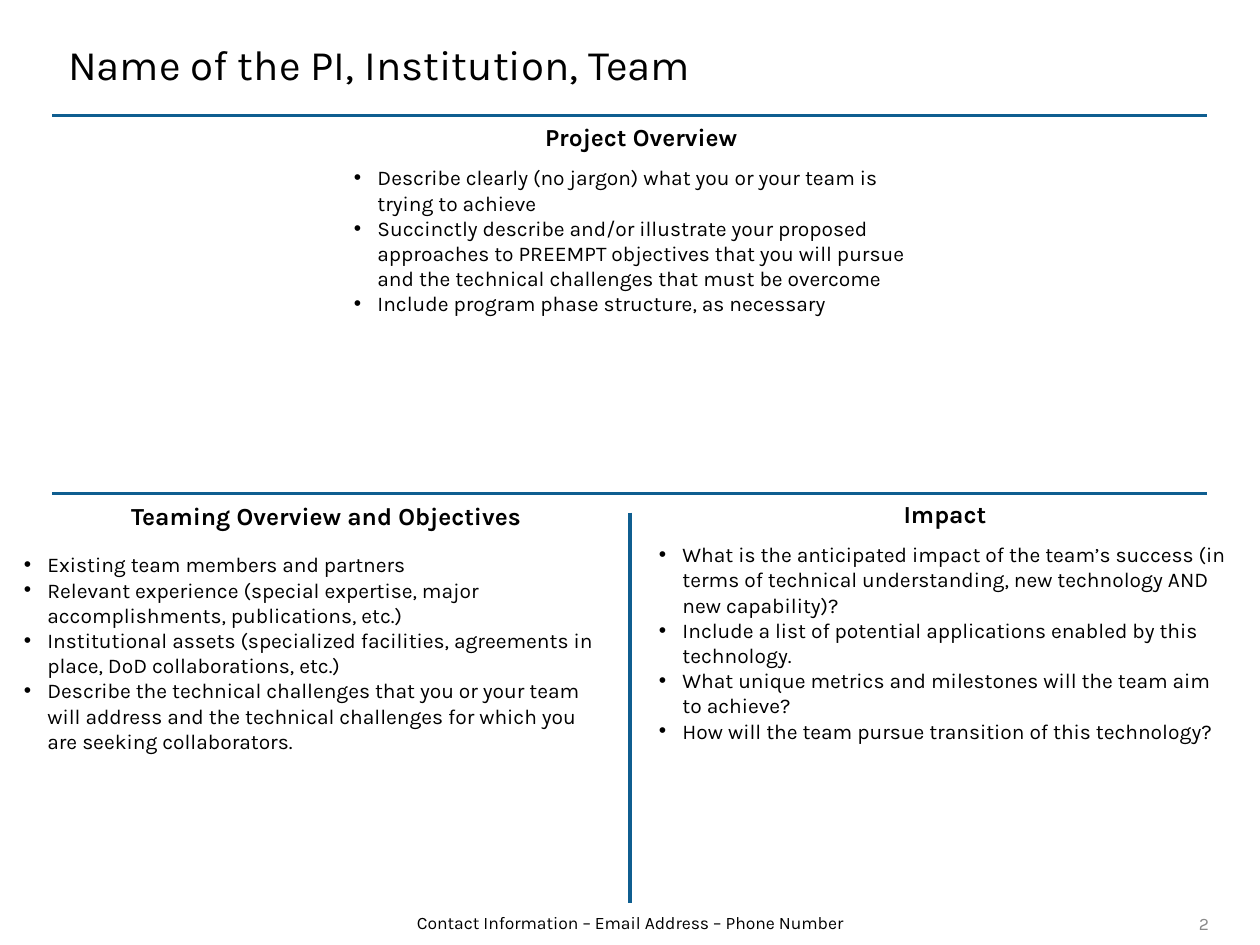
from lxml import etree
from pptx import Presentation
from pptx import util as u
from pptx.dml.color import RGBColor
from pptx.enum import shapes, text
from pptx.oxml.ns import qn

Pt = u.Pt
FONT = "Karla"
BLACK, BLUE, GRAY = "000000", "0F5E90", "898989"
HEADING = {"size": Pt(14), "bold": True}
BODY = {"size": Pt(12)}
SMALL = {"size": Pt(10)}
LEFT, CENTER, RIGHT = text.PP_ALIGN.LEFT, text.PP_ALIGN.CENTER, text.PP_ALIGN.RIGHT
TOP, MIDDLE = text.MSO_ANCHOR.TOP, text.MSO_ANCHOR.MIDDLE

OVERVIEW = [
    "Describe clearly (no jargon) what you or your team is trying to achieve",
    "Succinctly describe and/or illustrate your proposed approaches to PREEMPT "
    "objectives that you will pursue and the technical challenges that must be overcome",
    "Include program phase structure, as necessary",
]
TEAMING = [
    "Existing team members and partners",
    "Relevant experience (special expertise, major accomplishments, publications, etc.)",
    "Institutional assets (specialized facilities, agreements in place, "
    "DoD collaborations, etc.)",
    "Describe the technical challenges that you or your team will address and the "
    "technical challenges for which you are seeking collaborators.",
]
IMPACT = [
    "What is the anticipated impact of the team’s success (in terms of technical "
    "understanding, new technology AND new capability)?",
    "Include a list of potential applications enabled by this technology.",
    "What unique metrics and milestones will the team aim to achieve?",
    "How will the team pursue transition of this technology?",
]


def color(value):
    return RGBColor.from_string(value)


def set_font(font, fmt, fill=BLACK):
    for name, value in {"name": FONT, **fmt}.items():
        setattr(font, name, value)
    font.color.rgb = color(fill)


def add_bullet(p):
    pPr = p._p.get_or_add_pPr()
    pPr.set("marL", str(Pt(13.5)))
    pPr.set("indent", str(Pt(-13.5)))
    etree.SubElement(pPr, qn("a:buFont")).set("typeface", "Arial")
    etree.SubElement(pPr, qn("a:buChar")).set("char", "•")


def add_text(s, box, lines, fmt, fill=BLACK, align=LEFT, anchor=TOP, bullets=False):
    sp = s.shapes.add_textbox(*map(Pt, box))
    tf = sp.text_frame
    tf.word_wrap = True
    tf.vertical_anchor = anchor
    for i, line in enumerate(lines):
        p = tf.paragraphs[0] if i == 0 else tf.add_paragraph()
        p.alignment = align
        if bullets:
            add_bullet(p)
        r = p.add_run()
        r.text = line
        set_font(r.font, fmt, fill)


def add_rule(s, x1, y1, x2, y2):
    line = s.shapes.add_connector(
        shapes.MSO_CONNECTOR.STRAIGHT, Pt(x1), Pt(y1), Pt(x2), Pt(y2))
    line.line.color.rgb = color(BLUE)
    line.line.width = Pt(1.75)
    etree.SubElement(line._element.spPr, qn("a:effectLst"))


def add_title(s, box, title):
    sp = s.shapes.title
    sp.left, sp.top, sp.width, sp.height = map(Pt, box)
    tf = sp.text_frame
    tf.auto_size = text.MSO_AUTO_SIZE.NONE
    tf.word_wrap = True
    tf.vertical_anchor = MIDDLE
    p = tf.paragraphs[0]
    p.alignment = LEFT
    r = p.add_run()
    r.text = title
    set_font(r.font, {"size": Pt(24)})


def add_section(s, box, heading, heading_box, bullets):
    x, y, w, h = box
    dx, dy, hw = heading_box
    add_text(s, (x + dx, y + dy, hw, 24.5), [heading], HEADING, align=CENTER)
    add_text(s, box, bullets, BODY, bullets=True)


def add_footer(s, box, contact, number):
    x, y, w, h = box
    add_text(s, box, [contact], SMALL, align=CENTER, anchor=MIDDLE)
    add_text(s, (x + 532.8, y + 0.5, 60, 23), [number], SMALL, GRAY, RIGHT, MIDDLE)


def main():
    prs = Presentation()
    prs.slide_width, prs.slide_height = Pt(720), Pt(540)
    s = prs.slides.add_slide(prs.slide_layouts[5])
    add_title(s, (31.7, 12.2, 562.3, 48.2), "Name of the PI, Institution, Team")
    for y in (66.2, 282.2):
        add_rule(s, 30, y, 690, y)
    add_rule(s, 360, 293, 360, 516)
    add_section(s, (195.1, 90.7, 342, 94.3), "Project Overview",
                (-8.6, -24.5, 360), OVERVIEW)
    add_section(s, (6.5, 311.8, 342, 123.8), "Teaming Overview and Objectives",
                (34.5, -28.8, 290.9), TEAMING)
    add_section(s, (369.4, 306, 342, 123.8), "Impact", (-9.4, -24.5, 360), IMPACT)
    add_footer(s, (105.1, 515.5, 509.8, 23.8),
               "Contact Information – Email Address – Phone Number", "2")
    prs.save("out.pptx")


if __name__ == "__main__":
    main()
